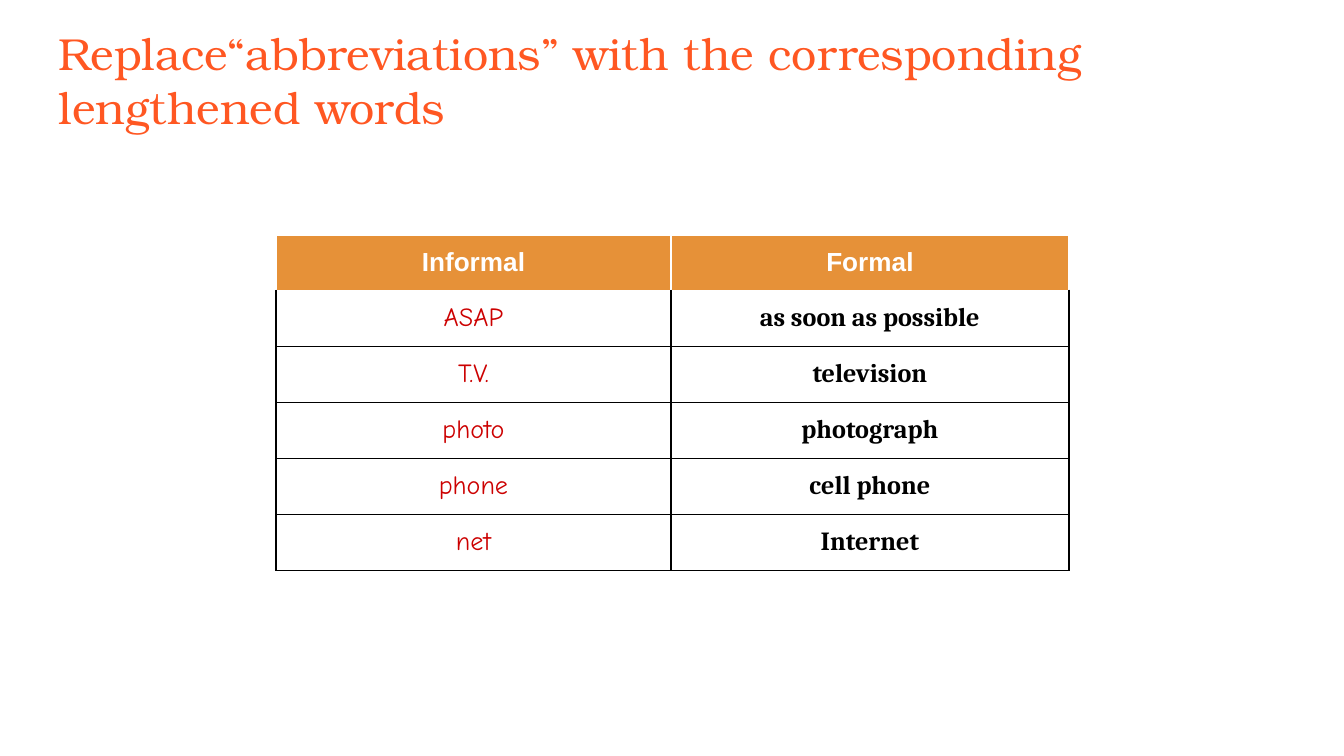
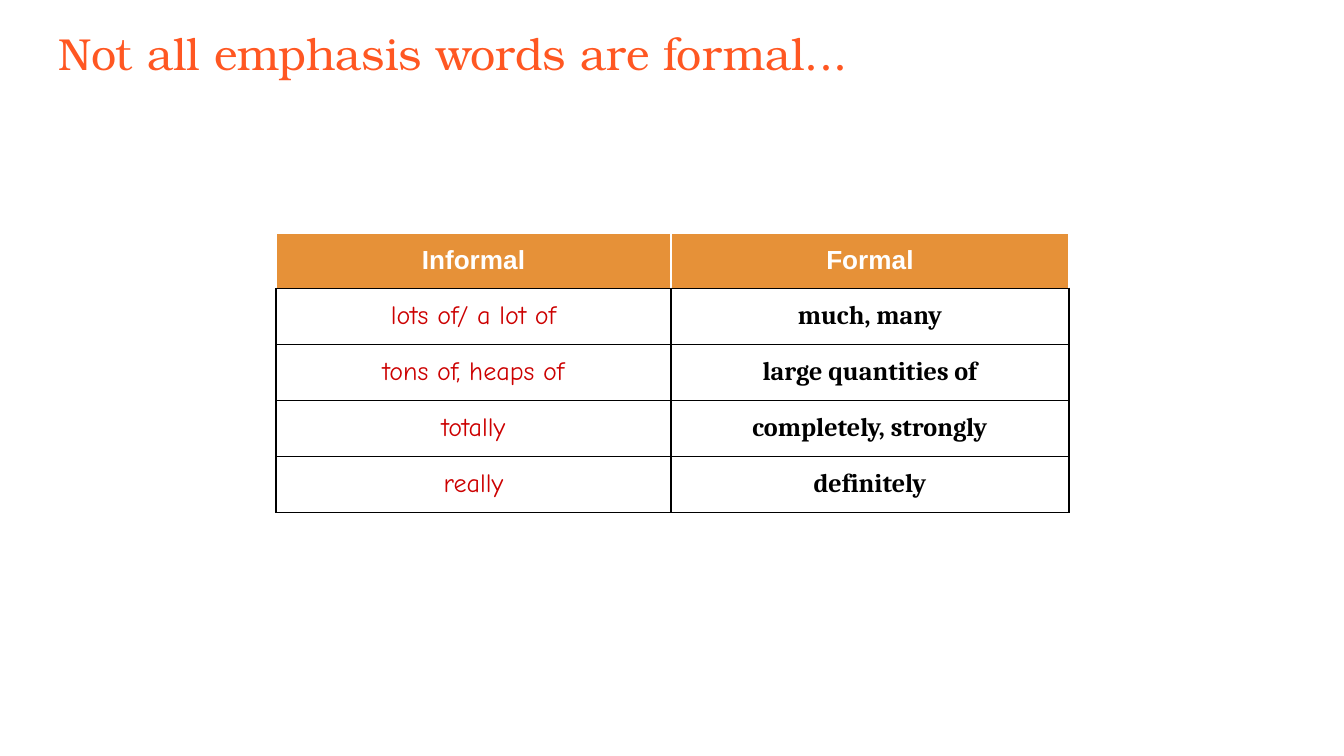
from lxml.etree import SubElement
from pptx import Presentation
from pptx.dml.color import RGBColor
from pptx.enum.text import MSO_ANCHOR, MSO_AUTO_SIZE, PP_ALIGN
from pptx.oxml.ns import qn
from pptx.util import Pt

PX = 914400 / 134.4  # EMU in one px


class Theme:
    accent, header, informal = "FF5722", "E69138", "CC0000"
    black, white = "000000", "FFFFFF"
    title_font, header_font = "TeX Gyre Bonum", "Arial"
    informal_font, formal_font = "Comic Neue", "Cambria"
    title_size, table_size = 24, 14


def set_text(tf, text, *, font, size, color, bold=False, align=PP_ALIGN.LEFT):
    p = tf.paragraphs[0]
    p.alignment = align
    r = p.add_run()
    r.text = text
    r.font.name, r.font.size, r.font.bold = font, Pt(size), bold
    r.font.color.rgb = RGBColor.from_string(color)


def set_borders(cell, *, width, sides, top, bottom):
    tc_pr = cell._tc.get_or_add_tcPr()
    edges = {"L": (sides, 1), "R": (sides, 1), "T": top, "B": bottom}
    for side, (color, points) in edges.items():
        ln = SubElement(tc_pr, qn(f"a:ln{side}"), w=str(Pt(points * width)))
        fill = SubElement(ln, qn("a:solidFill"))
        SubElement(fill, qn("a:srgbClr"), val=color)


# Slide content: title, table top, header rule (colour, points), word pairs
slides = [
    ("Replace“abbreviations” with the corresponding lengthened words",
     235, (Theme.white, 1),
     [("ASAP", "as soon as possible"), ("T.V.", "television"),
      ("photo", "photograph"), ("phone", "cell phone"), ("net", "Internet")]),
    ("Not all emphasis words are formal...",
     233, (Theme.black, 0.75),
     [("lots of/ a lot of", "much, many"),
      ("tons of, heaps of", "large quantities of"),
      ("totally", "completely, strongly"), ("really", "definitely")]),
]
col_widths = (395, 398)
row_height = 26  # minimum; rows grow to fit their text
header_style = dict(font=Theme.header_font, color=Theme.white, bold=True)
body_styles = (
    dict(font=Theme.informal_font, color=Theme.informal),
    dict(font=Theme.formal_font, color=Theme.black, bold=True),
)

prs = Presentation()
prs.slide_width, prs.slide_height = round(1344 * PX), round(756 * PX)

for title, top, rule, pairs in slides:
    s = prs.slides.add_slide(prs.slide_layouts[5])

    # Title
    sp = s.shapes.title
    sp.left, sp.top, sp.width, sp.height = (
        round(v * PX) for v in (46, 13, 1253, 133))
    tf = sp.text_frame
    tf.word_wrap, tf.auto_size = True, MSO_AUTO_SIZE.NONE
    tf.vertical_anchor = MSO_ANCHOR.TOP
    tf.margin_left = tf.margin_right = round(13 * PX)
    tf.margin_top = tf.margin_bottom = round(13 * PX)
    set_text(tf, title, font=Theme.title_font, size=Theme.title_size,
             color=Theme.accent)

    # Table
    rows = [("Informal", "Formal"), *pairs]
    table = s.shapes.add_table(
        len(rows), len(col_widths), round(276 * PX), round(top * PX),
        round(sum(col_widths) * PX), round(row_height * len(rows) * PX)).table
    table.horz_banding = False
    for col, width in zip(table.columns, col_widths):
        col.width = round(width * PX)

    # Cells
    for i, words in enumerate(rows):
        for j, word in enumerate(words):
            cell = table.cell(i, j)
            cell.margin_left = cell.margin_right = round(10 * PX)
            cell.margin_top = cell.margin_bottom = round(13 * PX)
            line = (Theme.black, 1)
            if i == 0:
                style = header_style
                set_borders(cell, width=rule[1], sides=Theme.white,
                            top=(Theme.white, 1), bottom=(rule[0], 1))
                cell.fill.solid()
                cell.fill.fore_color.rgb = RGBColor.from_string(Theme.header)
            else:
                style = body_styles[j]
                set_borders(cell, width=1, sides=Theme.black,
                            top=rule if i == 1 else line, bottom=line)
                cell.fill.background()
            set_text(cell.text_frame, word, size=Theme.table_size,
                     align=PP_ALIGN.CENTER, **style)

prs.save("out.pptx")
